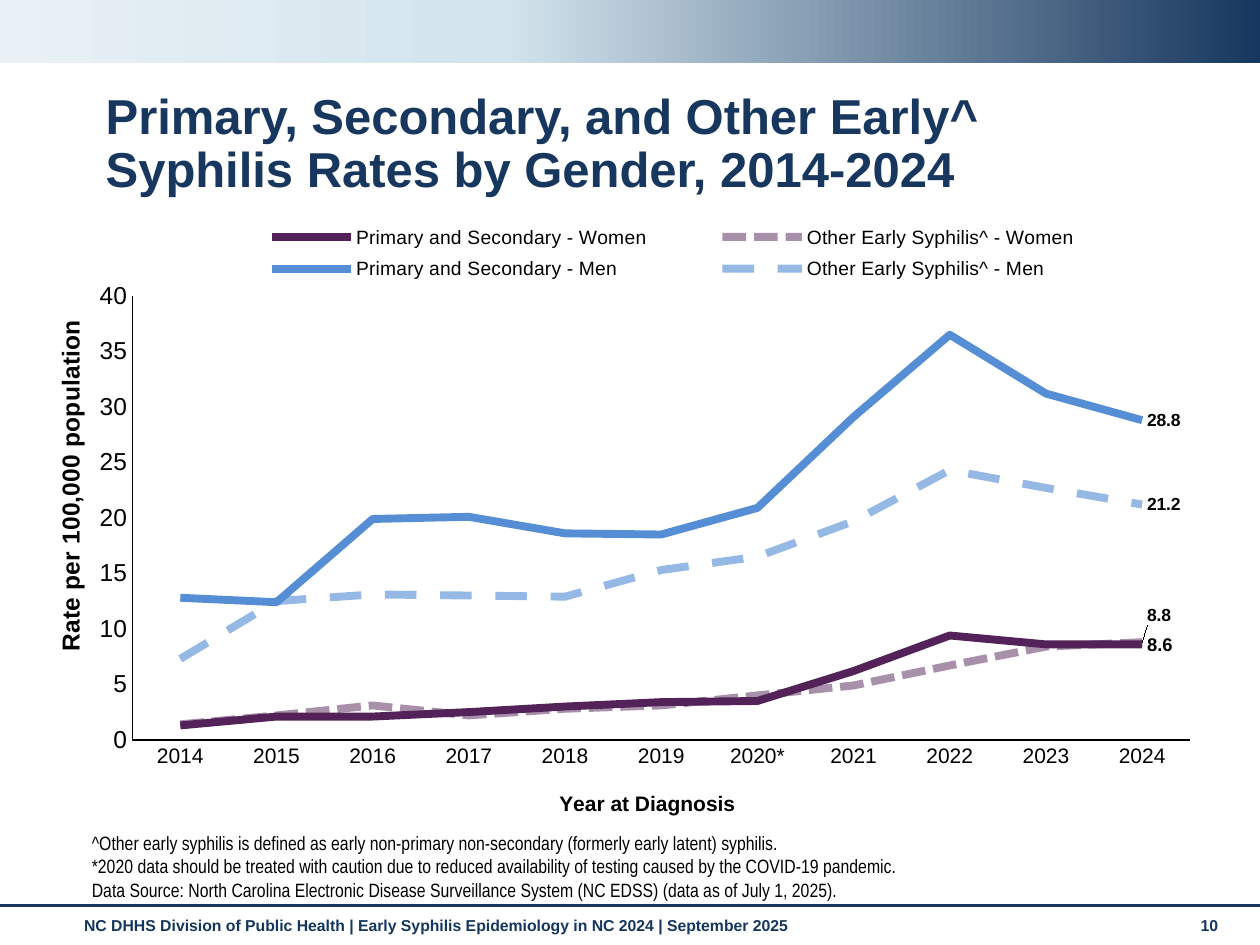
from copy import deepcopy

from lxml import etree
from pptx import Presentation
from pptx.chart.data import CategoryChartData
from pptx.dml.color import RGBColor
from pptx.enum.chart import XL_CHART_TYPE, XL_LABEL_POSITION, XL_LEGEND_POSITION, XL_TICK_MARK
from pptx.enum.dml import MSO_LINE
from pptx.enum.shapes import MSO_CONNECTOR, MSO_SHAPE
from pptx.enum.text import MSO_ANCHOR
from pptx.oxml.ns import qn
from pptx.util import Pt

LINE_CHART = XL_CHART_TYPE.LINE
RIGHT = XL_LABEL_POSITION.RIGHT
LEGEND_TOP = XL_LEGEND_POSITION.TOP
NO_TICK = XL_TICK_MARK.NONE
SHORT_DASH = MSO_LINE.SQUARE_DOT
LONG_DASH = MSO_LINE.DASH
STRAIGHT = MSO_CONNECTOR.STRAIGHT
RECTANGLE = MSO_SHAPE.RECTANGLE
TOP = MSO_ANCHOR.TOP
BOTTOM = MSO_ANCHOR.BOTTOM

COLORS = {
    "navy": "17375E",
    "footer": "15365E",
    "ice": "D3E4ED",
    "mist": "E9F1F6",
    "women": "522258",
    "men": "558ED5",
    "black": "000000",
}

YEARS = ["2014", "2015", "2016", "2017", "2018", "2019", "2020*", "2021", "2022", "2023", "2024"]
SERIES = [
    ("Primary and Secondary - Women", "women", None, 100, 10.5,
     [1.3, 2.1, 2.1, 2.5, 3, 3.4, 3.5, 6.2, 9.4, 8.6, 8.6]),
    ("Other Early Syphilis^ - Women", "women", SHORT_DASH, 50, 10,
     [1.4, 2.2, 3.1, 2.2, 2.8, 3.1, 4, 4.9, 6.7, 8.4, 8.8]),
    ("Primary and Secondary - Men", "men", None, 100, 10,
     [12.8, 12.4, 19.9, 20.1, 18.6, 18.5, 20.9, 29.1, 36.5, 31.2, 28.8]),
    ("Other Early Syphilis^ - Men", "men", LONG_DASH, 62, 10,
     [7.3, 12.5, 13.1, 13, 12.9, 15.3, 16.5, 19.7, 24.3, 22.7, 21.2]),
]
NOTES = [
    "^Other early syphilis is defined as early non-primary non-secondary (formerly early latent) syphilis.",
    "*2020 data should be treated with caution due to reduced availability of testing caused by the COVID-19 pandemic.",
    "Data Source: North Carolina Electronic Disease Surveillance System (NC EDSS) (data as of July 1, 2025).",
]


def rgb(name):
    return RGBColor.from_string(COLORS[name])


def style_font(font, size, color="black", bold=False, face="Arial"):
    font.name = face
    font.size = Pt(size)
    font.bold = bold
    font.color.rgb = rgb(color)


def add_text(page, lines, left, top, width, height, size, color,
             bold=True, face="Arial", spacing=None, anchor=TOP):
    box = page.shapes.add_textbox(Pt(left), Pt(top), Pt(width), Pt(height))
    frame = box.text_frame
    frame.word_wrap = True
    frame.vertical_anchor = anchor
    frame.text = "\n".join(lines)
    for para in frame.paragraphs:
        style_font(para.font, size, color, bold, face)
        if spacing:
            para.line_spacing = spacing


def add_band(page):
    band = page.shapes.add_shape(RECTANGLE, 0, 0, Pt(720), Pt(36))
    band.shadow.inherit = False
    band.line.fill.background()
    band.fill.gradient()
    band.fill.gradient_angle = 180
    stop_list = band.fill._fill._gradFill.find(qn("a:gsLst"))
    stop_list.append(deepcopy(stop_list[-1]))
    stops = zip(band.fill.gradient_stops, [0, 0.6, 1], ["navy", "ice", "mist"])
    for stop, position, color in stops:
        stop.position = position
        stop.color.rgb = rgb(color)


def add_rule(page, y):
    rule = page.shapes.add_connector(STRAIGHT, 0, Pt(y), Pt(720), Pt(y))
    rule.line.color.rgb = rgb("navy")
    rule.line.width = Pt(1.75)
    etree.SubElement(rule._element.spPr, qn("a:effectLst"))


def set_layout(parent, index, **values):
    for old in parent.findall(qn("c:layout")):
        parent.remove(old)
    layout = etree.Element(qn("c:layout"))
    manual = etree.SubElement(layout, qn("c:manualLayout"))
    for tag, value in values.items():
        etree.SubElement(manual, qn("c:" + tag)).set("val", str(value))
    parent.insert(index, layout)


def style_axis(axis, title, title_size, label_size, x, y):
    axis.has_major_gridlines = False
    axis.major_tick_mark = NO_TICK
    axis.minor_tick_mark = NO_TICK
    axis.format.line.color.rgb = rgb("black")
    axis.format.line.width = Pt(0.75)
    style_font(axis.tick_labels.font, label_size)
    frame = axis.axis_title.text_frame
    frame.text = title
    style_font(frame.paragraphs[0].font, title_size, bold=True)
    set_layout(axis.axis_title._element, 1, xMode="edge", yMode="edge", x=x, y=y)


def style_series(series, color, dash, opacity, label_size):
    series.smooth = False
    line = series.format.line
    line.width = Pt(4.5)
    line.color.rgb = rgb(color)
    if dash:
        line.dash_style = dash
    if opacity < 100:
        fill_color = next(series._element.spPr.iter(qn("a:srgbClr")))
        etree.SubElement(fill_color, qn("a:alpha")).set("val", str(opacity * 1000))
    series.data_labels.show_value = False
    label = series.points[len(YEARS) - 1].data_label
    style_font(label.font, label_size, bold=True)
    label.position = RIGHT


def add_rate_chart(page):
    data = CategoryChartData()
    data.categories = YEARS
    for name, *_, values in SERIES:
        data.add_series(name, values)
    frame = page.shapes.add_chart(LINE_CHART, Pt(15.1), Pt(112.3), Pt(671.8), Pt(378.7), data)
    chart = frame.chart
    chart.has_title = False
    style_font(chart.font, 10)
    chart.plots[0].vary_by_categories = False

    style_axis(chart.category_axis, "Year at Diagnosis", 12, 12, 0.45, 0.89)
    style_axis(chart.value_axis, "Rate per 100,000 population", 14, 14, 0.02, 0.18)
    chart.value_axis.minimum_scale = 0
    chart.value_axis.maximum_scale = 40
    chart.value_axis.major_unit = 5

    chart.has_legend = True
    chart.legend.position = LEGEND_TOP
    chart.legend.include_in_layout = False
    style_font(chart.legend.font, 11)
    set_layout(chart.legend._element, 1, xMode="edge", yMode="edge", x=0.15, y=0.03, w=0.8, h=0.11)
    plot_area = chart._chartSpace.chart.plotArea
    set_layout(plot_area, 0, layoutTarget="inner", xMode="edge", yMode="edge",
               x=0.09, y=0.15, w=0.9, h=0.67)

    for series, (_, color, dash, opacity, size, _) in zip(chart.plots[0].series, SERIES):
        style_series(series, color, dash, opacity, size)
    raised_label = next(chart.plots[0].series[1]._element.iter(qn("c:dLbl")))
    set_layout(raised_label, 1, x=0, y=-0.04)


def main():
    deck = Presentation()
    deck.slide_width, deck.slide_height = Pt(720), Pt(540)
    page = deck.slides.add_slide(deck.slide_layouts[6])
    add_text(page, ["NC DHHS Division of Public Health | Early Syphilis Epidemiology in NC 2024 | September 2025"],
             41, 519.8, 629.3, 21, 9, "footer")
    add_text(page, ["10"], 679, 519.8, 31.7, 21, 9, "footer")
    add_band(page)
    add_rule(page, 517.5)
    add_text(page, ["Primary, Secondary, and Other Early^ Syphilis Rates by Gender, 2014-2024"],
             53.3, 49, 617.8, 43.2, 28, "navy", spacing=0.9)
    add_rate_chart(page)
    add_text(page, NOTES, 45.4, 479.5, 629.3, 38.9, 11, "black",
             bold=False, face="Arial Narrow", anchor=BOTTOM)
    deck.save("out.pptx")


if __name__ == "__main__":
    main()
